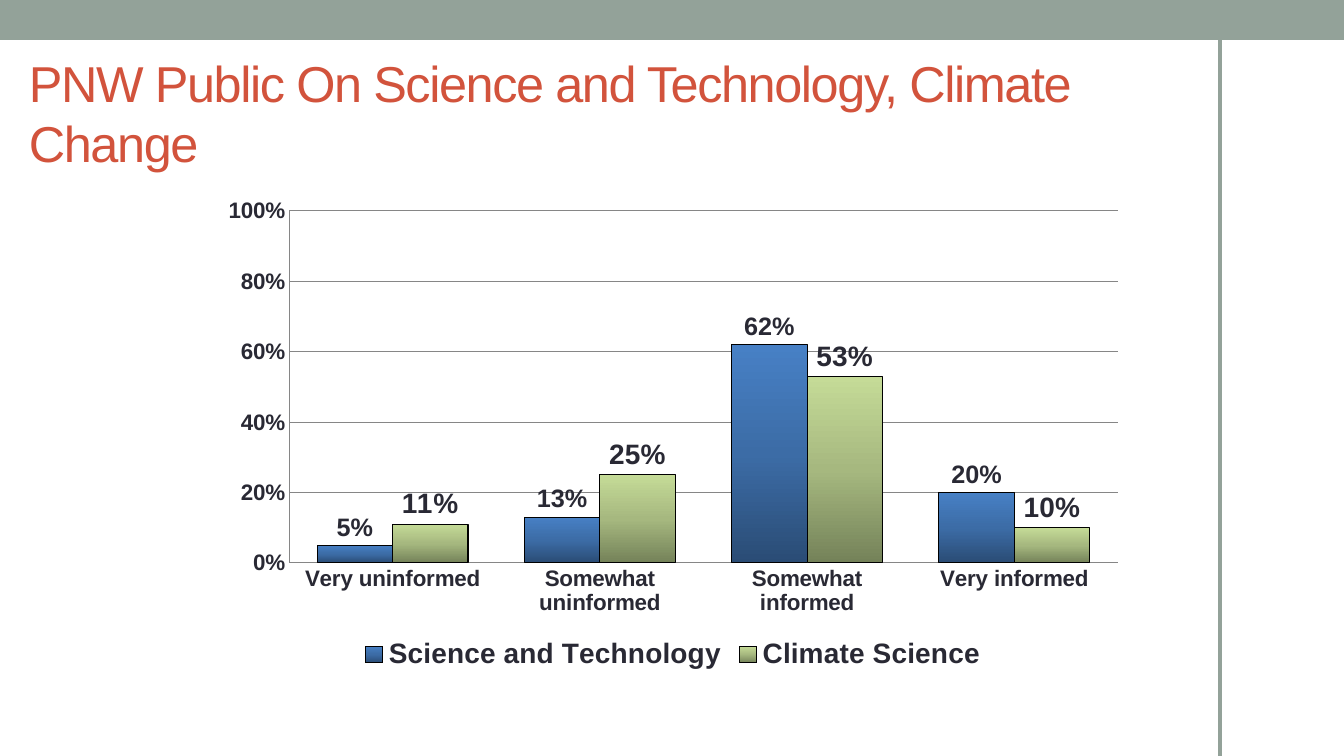
import copy

import pptx
import pptx.chart.data
import pptx.dml.color
import pptx.enum.chart
import pptx.enum.shapes
import pptx.enum.text
import pptx.oxml.ns
import pptx.oxml.xmlchemy
import pptx.util

PX = 914400 / 100.8
FONT = "Arial"
COLORS = {"sage": "93A299", "title": "D2533C", "text": "292934",
          "grid": "868686", "outline": "000000"}
GRADIENTS = {"Science and Technology": ["2A4C75", "3C6CA6", "4780C5"],
             "Climate Science": ["748259", "A6B87F", "C5DB97"]}


def px(*lengths):
    return [round(length * PX) for length in lengths]


def style_font(font, size, color, bold=False):
    font.name, font.size, font.bold = FONT, pptx.util.Pt(size), bold
    font.color.rgb = pptx.dml.color.RGBColor.from_string(COLORS[color])


deck = pptx.Presentation()
deck.slide_width, deck.slide_height = px(1344, 756)
slide = deck.slides.add_slide(deck.slide_layouts[6])
sage = pptx.dml.color.RGBColor.from_string(COLORS["sage"])
grid_color = pptx.dml.color.RGBColor.from_string(COLORS["grid"])

# Top band and right rail
band = slide.shapes.add_shape(pptx.enum.shapes.MSO_SHAPE.RECTANGLE, *px(0, 0, 1344, 40))
band.shadow.inherit = False
band.fill.solid()
band.fill.fore_color.rgb = sage
band.line.fill.background()

rail = slide.shapes.add_connector(pptx.enum.shapes.MSO_CONNECTOR.STRAIGHT,
                                  *px(1220, 38, 1220, 756))
rail.line.color.rgb = sage
rail.line.width = pptx.util.Pt(3.25)
rail._element.spPr.append(pptx.oxml.xmlchemy.OxmlElement("a:effectLst"))

# Title
title = slide.shapes.add_textbox(*px(19, 58, 1068, 109)).text_frame
title.word_wrap = True
title.vertical_anchor = pptx.enum.text.MSO_ANCHOR.MIDDLE
title.text = "PNW Public On Science and Technology, Climate Change"
title_run = title.paragraphs[0].runs[0]
style_font(title_run.font, 36, "title")
title_run.font._element.set("spc", "-100")

# Chart data
survey = pptx.chart.data.CategoryChartData(number_format="0%")
survey.categories = ["Very uninformed", "Somewhat uninformed",
                     "Somewhat informed", "Very informed"]
survey.add_series("Science and Technology", [0.05, 0.13, 0.62, 0.2])
survey.add_series("Climate Science", [0.11, 0.25, 0.53, 0.1])
chart = slide.shapes.add_chart(pptx.enum.chart.XL_CHART_TYPE.COLUMN_CLUSTERED,
                               *px(210, 190, 926, 486), survey).chart
style_font(chart.font, 10, "text")
chart.has_title = False

# Axes
for axis in (chart.category_axis, chart.value_axis):
    axis.major_tick_mark = axis.minor_tick_mark = pptx.enum.chart.XL_TICK_MARK.NONE
    style_font(axis.tick_labels.font, 16, "text", True)
    axis.format.line.color.rgb = grid_color
shares = chart.value_axis
shares.minimum_scale, shares.maximum_scale, shares.major_unit = 0, 1, 0.2
shares.tick_labels.number_format = "0%"
shares.tick_labels.number_format_is_linked = False
shares.has_major_gridlines = True
shares.major_gridlines.format.line.color.rgb = grid_color

# Legend
chart.has_legend = True
chart.legend.position = pptx.enum.chart.XL_LEGEND_POSITION.BOTTOM
chart.legend.include_in_layout = False
style_font(chart.legend.font, 20, "text", True)

# Columns with three-stop gradients and value labels
columns = chart.plots[0]
columns.gap_width, columns.overlap = 75, 0
columns.vary_by_categories = False
for series, label_size in zip(columns.series, (18, 20)):
    fill = series.format.fill
    fill.gradient()
    fill.gradient_angle = 90
    first_stop = fill.gradient_stops[0]._gs
    first_stop.addnext(copy.deepcopy(first_stop))
    for stop, position, color in zip(fill.gradient_stops, (0, 0.5, 1), GRADIENTS[series.name]):
        stop.position = position
        stop.color.rgb = pptx.dml.color.RGBColor.from_string(color)
    series.format.line.color.rgb = pptx.dml.color.RGBColor.from_string(COLORS["outline"])
    series.format.line.width = pptx.util.Pt(0.75)
    labels = series.data_labels
    labels.show_value = True
    labels.number_format, labels.number_format_is_linked = "0%", False
    labels.position = pptx.enum.chart.XL_LABEL_POSITION.OUTSIDE_END
    style_font(labels.font, label_size, "text", True)

# Plot area placement, as shares of the chart frame
plot_area = chart._chartSpace.chart.plotArea
for old_layout in plot_area.findall(pptx.oxml.ns.qn("c:layout")):
    plot_area.remove(old_layout)
layout = pptx.oxml.xmlchemy.OxmlElement("c:layout")
manual = pptx.oxml.xmlchemy.OxmlElement("c:manualLayout")
layout.append(manual)
for tag, value in (("layoutTarget", "inner"), ("xMode", "edge"), ("yMode", "edge"),
                   ("x", 79 / 926), ("y", 21 / 486), ("w", 829 / 926), ("h", 352 / 486)):
    setting = pptx.oxml.xmlchemy.OxmlElement("c:" + tag)
    setting.set("val", str(value))
    manual.append(setting)
plot_area.insert(0, layout)

deck.save("out.pptx")
